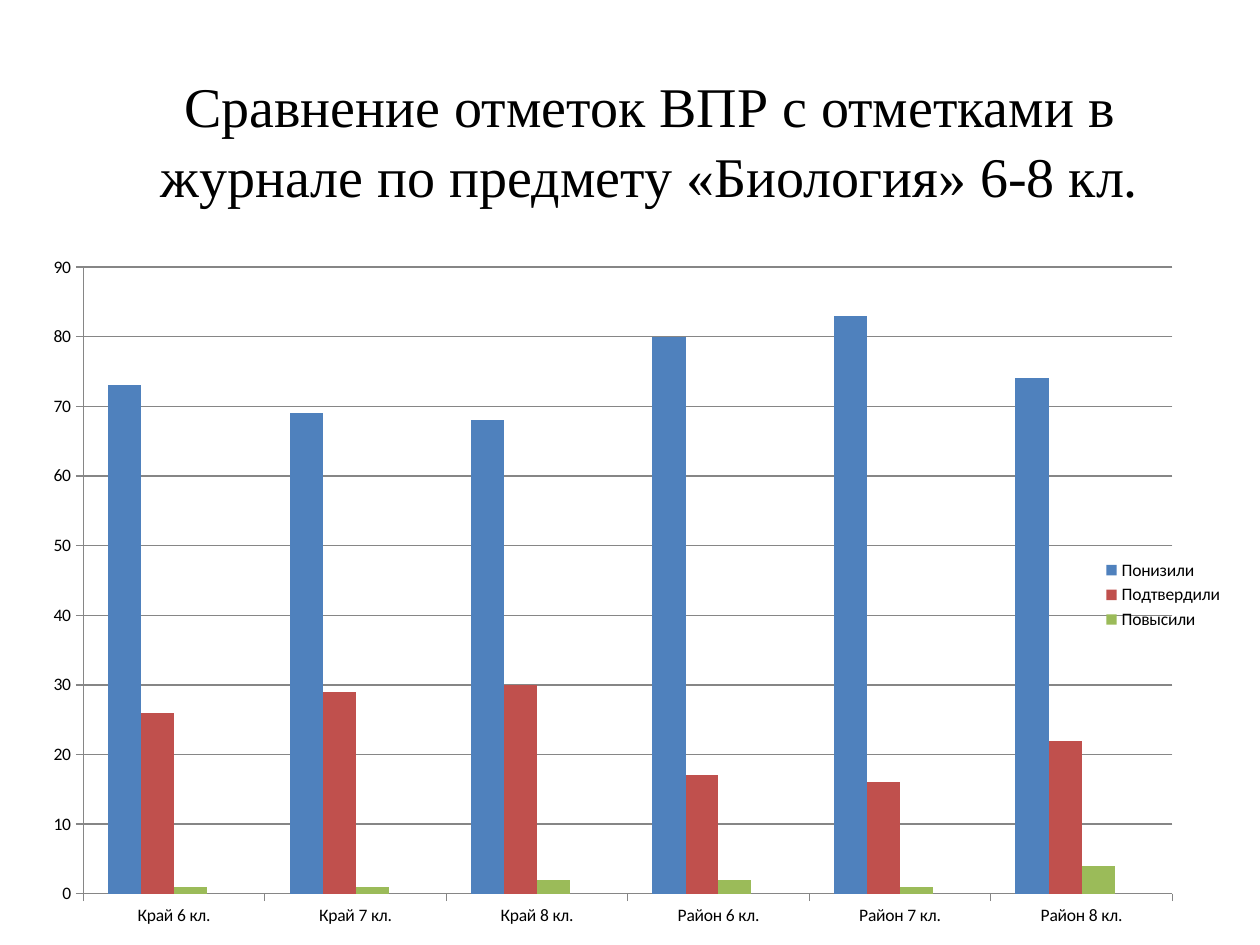
from dataclasses import dataclass

from lxml.etree import SubElement
from pptx import Presentation
from pptx.chart.data import CategoryChartData
from pptx.dml.color import RGBColor
from pptx.enum.chart import XL_CHART_TYPE, XL_LEGEND_POSITION, XL_TICK_MARK
from pptx.enum.text import MSO_ANCHOR, MSO_AUTO_SIZE, PP_ALIGN
from pptx.oxml import parse_xml
from pptx.oxml.ns import nsdecls, qn
from pptx.util import Inches, Pt


@dataclass(frozen=True)
class Theme:
    title_font: str = "Times New Roman"
    title_size: int = 32
    chart_font: str = "Calibri"
    chart_size: int = 10
    text: str = "000000"
    grid: str = "868686"
    series: tuple = ("4F81BD", "C0504D", "9BBB59", "8064A2")


THEME = Theme()
WIDTH, HEIGHT = Inches(10), Inches(7.5)

# Shares of the slide: left, top, width, height
TITLE_BOX = (0.091, 0.039, 0.85, 0.215)
CHART_BOX = (0.028, 0.259, 0.953, 0.741)
# Shares of the chart
PLOT_BOX = {"x": 0.04, "y": 0.032, "w": 0.907, "h": 0.895}

TITLE = "Сравнение отметок ВПР с отметками в журнале по предмету «Биология» 6-8 кл."
CATEGORIES = [f"{area} {grade} кл." for area in ("Край", "Район") for grade in (6, 7, 8)]
# The empty last series keeps a free slot in every cluster
SERIES = {
    "Понизили": (73, 69, 68, 80, 83, 74),
    "Подтвердили": (26, 29, 30, 17, 16, 22),
    "Повысили": (1, 1, 2, 2, 1, 4),
    "Series 4": (None,) * len(CATEGORIES),
}


def rgb(value):
    return RGBColor.from_string(value)


def place(box):
    left, top, width, height = box
    return int(left * WIDTH), int(top * HEIGHT), int(width * WIDTH), int(height * HEIGHT)


def add_title(s, text):
    sp = s.shapes.title
    sp.left, sp.top, sp.width, sp.height = place(TITLE_BOX)
    tf = sp.text_frame
    tf.word_wrap = True
    tf.auto_size = MSO_AUTO_SIZE.NONE
    tf.vertical_anchor = MSO_ANCHOR.MIDDLE
    p = tf.paragraphs[0]
    p.alignment = PP_ALIGN.CENTER
    p.line_spacing = 1.05
    r = p.add_run()
    r.text = text
    r.font.name = THEME.title_font
    r.font.size = Pt(THEME.title_size)
    r.font.color.rgb = rgb(THEME.text)


def set_plot_layout(chart):
    """Fix the inner plot area as shares of the chart."""
    plot_area = chart._chartSpace.chart.plotArea
    for old in plot_area.findall(qn("c:layout")):
        plot_area.remove(old)
    layout = parse_xml(f"<c:layout {nsdecls('c')}/>")
    manual = SubElement(layout, qn("c:manualLayout"))
    settings = {"layoutTarget": "inner", "xMode": "edge", "yMode": "edge", **PLOT_BOX}
    for tag, value in settings.items():
        SubElement(manual, qn(f"c:{tag}")).set("val", str(value))
    plot_area.insert(0, layout)


def hide_legend_entry(legend, index):
    entry = parse_xml(
        f'<c:legendEntry {nsdecls("c")}><c:idx val="{index}"/>'
        '<c:delete val="1"/></c:legendEntry>'
    )
    legend._element.find(qn("c:legendPos")).addnext(entry)


def style_axes(chart):
    values = chart.value_axis
    values.minimum_scale, values.maximum_scale, values.major_unit = 0, 90, 10
    values.has_major_gridlines = True
    for axis in (chart.category_axis, values):
        axis.major_tick_mark = XL_TICK_MARK.OUTSIDE
        axis.minor_tick_mark = XL_TICK_MARK.NONE
    for fmt in (chart.category_axis.format, values.format, values.major_gridlines.format):
        fmt.line.color.rgb = rgb(THEME.grid)
        fmt.line.width = Pt(0.75)


def add_column_chart(s):
    data = CategoryChartData(number_format="General")
    data.categories = CATEGORIES
    for name, values in SERIES.items():
        data.add_series(name, values)
    chart = s.shapes.add_chart(
        XL_CHART_TYPE.COLUMN_CLUSTERED, *place(CHART_BOX), data
    ).chart
    chart.has_title = False
    chart.font.name = THEME.chart_font
    chart.font.size = Pt(THEME.chart_size)
    chart.font.color.rgb = rgb(THEME.text)

    # Columns
    plot = chart.plots[0]
    plot.gap_width, plot.overlap = 150, 0
    plot.vary_by_categories = False
    for series, color in zip(plot.series, THEME.series):
        series.invert_if_negative = False
        series.format.fill.solid()
        series.format.fill.fore_color.rgb = rgb(color)

    # Axes, legend and plot area
    style_axes(chart)
    chart.has_legend = True
    chart.legend.position = XL_LEGEND_POSITION.RIGHT
    chart.legend.include_in_layout = False
    hide_legend_entry(chart.legend, len(SERIES) - 1)
    set_plot_layout(chart)


def main():
    prs = Presentation()
    prs.slide_width, prs.slide_height = WIDTH, HEIGHT
    s = prs.slides.add_slide(prs.slide_layouts.get_by_name("Title Only"))
    add_title(s, TITLE)
    add_column_chart(s)
    prs.save("out.pptx")


if __name__ == "__main__":
    main()
